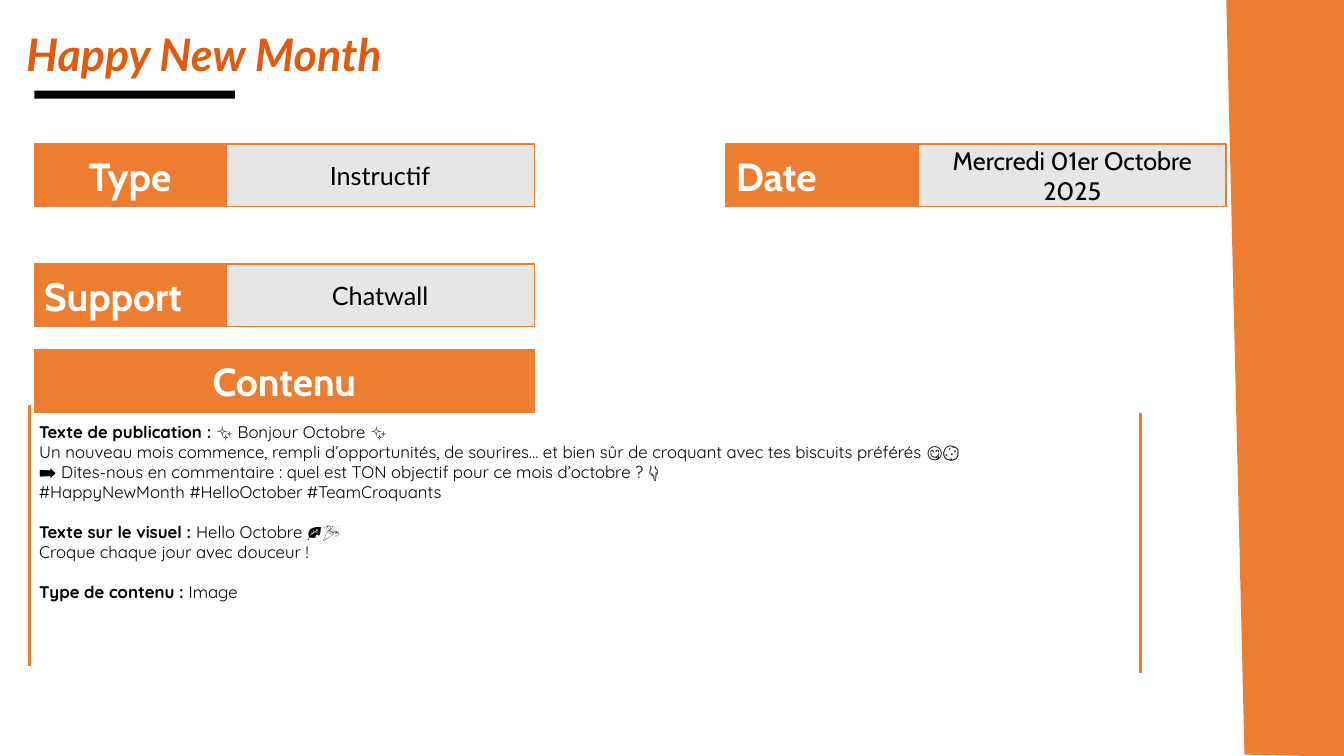
from typing import NamedTuple

from lxml.etree import SubElement
from pptx import Presentation
from pptx.dml.color import RGBColor
from pptx.enum.shapes import MSO_CONNECTOR, MSO_SHAPE
from pptx.enum.text import MSO_ANCHOR, MSO_AUTO_SIZE, PP_ALIGN
from pptx.oxml.ns import qn
from pptx.slide import Slide
from pptx.text.text import Font
from pptx.util import Pt

PX = 9144
ORANGE = RGBColor(0xED, 0x7D, 0x31)
RUST = RGBColor(0xE1, 0x5B, 0x0F)
GREY = RGBColor(0xE7, 0xE6, 0xE6)
INK = RGBColor(0x18, 0x17, 0x17)
BLACK = RGBColor(0, 0, 0)
WHITE = RGBColor(0xFF, 0xFF, 0xFF)
CELL_H = 62


class Cell(NamedTuple):
    text: str
    left: int
    top: int
    width: int
    label: bool = False
    face: str = "Cabin"
    align: PP_ALIGN = PP_ALIGN.CENTER


class Rule(NamedTuple):
    left: int
    top: int
    end: int


class Span(NamedTuple):
    text: str
    bold: bool = False
    color: RGBColor = BLACK


class Para(NamedTuple):
    spans: list[Span]
    gap: int = 0


CELLS = [
    Cell("Type", 34, 143, 190, True),
    Cell("Instructif", 224, 143, 306, face="Lato"),
    Cell("Mercredi 01er Octobre 2025", 911, 143, 305),
    Cell("Date", 720, 143, 191, True, align=PP_ALIGN.LEFT),
    Cell("Support", 34, 262, 190, True, align=PP_ALIGN.LEFT),
    Cell("Chatwall", 224, 262, 306, face="Lato"),
    Cell("Contenu", 34, 347, 496, True),
]
RULES = [Rule(29, 402, 661), Rule(1131, 410, 668)]
PARAS = [
    Para([Span("Texte de publication ", True), Span(": ", True, INK),
          Span("✨ Bonjour Octobre ✨")]),
    Para([Span("Un nouveau mois commence, rempli d’opportunités, de sourires… "
               "et bien sûr de croquant avec tes biscuits préférés 😋🍪")]),
    Para([Span("➡️ Dites-nous en commentaire : quel est TON objectif "
               "pour ce mois d’octobre ? 👇")]),
    Para([Span("#HappyNewMonth #HelloOctober #TeamCroquants")]),
    Para([Span("Texte sur le visuel : ", True), Span("Hello Octobre 🍂🎉")], 14),
    Para([Span("Croque chaque jour avec douceur !")]),
    Para([Span("Type de contenu : ", True), Span("Image")], 14),
]


def style(font: Font, face: str, size: int, color: RGBColor, bold: bool = False) -> None:
    font.name = face
    font.size = Pt(size)
    font.color.rgb = color
    font.bold = bold


def draw_band(slide: Slide) -> None:
    pen = slide.shapes.build_freeform(1217, 0, scale=PX)
    pen.add_line_segments([(1333, 0), (1334, 750), (1235, 748)], close=True)
    band = pen.convert_to_shape()
    band.shadow.inherit = False
    band.fill.solid()
    band.fill.fore_color.rgb = ORANGE
    band.line.color.rgb = ORANGE
    band.line.width = Pt(1)


def draw_bar(slide: Slide) -> None:
    bar = slide.shapes.add_shape(MSO_SHAPE.RECTANGLE, 34 * PX, 90 * PX, 199 * PX, 8 * PX)
    bar.shadow.inherit = False
    bar.fill.solid()
    bar.fill.fore_color.rgb = BLACK
    bar.line.fill.background()


def draw_rule(slide: Slide, rule: Rule) -> None:
    line = slide.shapes.add_connector(
        MSO_CONNECTOR.STRAIGHT, rule.left * PX, rule.top * PX, rule.left * PX, rule.end * PX)
    line.line.color.rgb = ORANGE
    line.line.width = Pt(2.25)
    SubElement(line._element.spPr, qn("a:effectLst"))


def draw_cell(slide: Slide, cell: Cell) -> None:
    box = slide.shapes.add_shape(
        MSO_SHAPE.RECTANGLE, cell.left * PX, cell.top * PX, cell.width * PX, CELL_H * PX)
    box.shadow.inherit = False
    box.fill.solid()
    box.fill.fore_color.rgb = ORANGE if cell.label else GREY
    box.line.color.rgb = ORANGE
    box.line.width = Pt(1)
    frame = box.text_frame
    frame.word_wrap = True
    frame.vertical_anchor = MSO_ANCHOR.MIDDLE
    para = frame.paragraphs[0]
    para.text = cell.text
    para.alignment = cell.align
    if cell.label:
        style(para.font, cell.face, 28, WHITE, True)
    else:
        style(para.font, cell.face, 18, BLACK)


def draw_body(slide: Slide) -> None:
    box = slide.shapes.add_textbox(29 * PX, 413 * PX, 1065 * PX, 212 * PX)
    frame = box.text_frame
    frame.word_wrap = True
    frame.auto_size = MSO_AUTO_SIZE.SHAPE_TO_FIT_TEXT
    for rank, item in enumerate(PARAS):
        para = frame.add_paragraph() if rank else frame.paragraphs[0]
        para.space_before = Pt(item.gap)
        style(para.font, "Quicksand", 12, BLACK)
        for span in item.spans:
            run = para.add_run()
            run.text = span.text
            if span.bold:
                run.font.bold = True
            if span.color != BLACK:
                run.font.color.rgb = span.color


def draw_title(slide: Slide) -> None:
    box = slide.shapes.add_textbox(16 * PX, 22 * PX, 1103 * PX, 52 * PX)
    box.text_frame.word_wrap = True
    para = box.text_frame.paragraphs[0]
    para.text = "Happy New Month"
    para.alignment = PP_ALIGN.JUSTIFY
    style(para.font, "Lato", 32, RUST, True)
    para.font.italic = True


def main() -> None:
    deck = Presentation()
    deck.slide_width = 1333 * PX
    deck.slide_height = 750 * PX
    slide = deck.slides.add_slide(deck.slide_layouts[6])
    draw_band(slide)
    draw_bar(slide)
    for rule in RULES:
        draw_rule(slide, rule)
    for cell in CELLS:
        draw_cell(slide, cell)
    draw_body(slide)
    draw_title(slide)
    deck.save("out.pptx")


if __name__ == "__main__":
    main()
